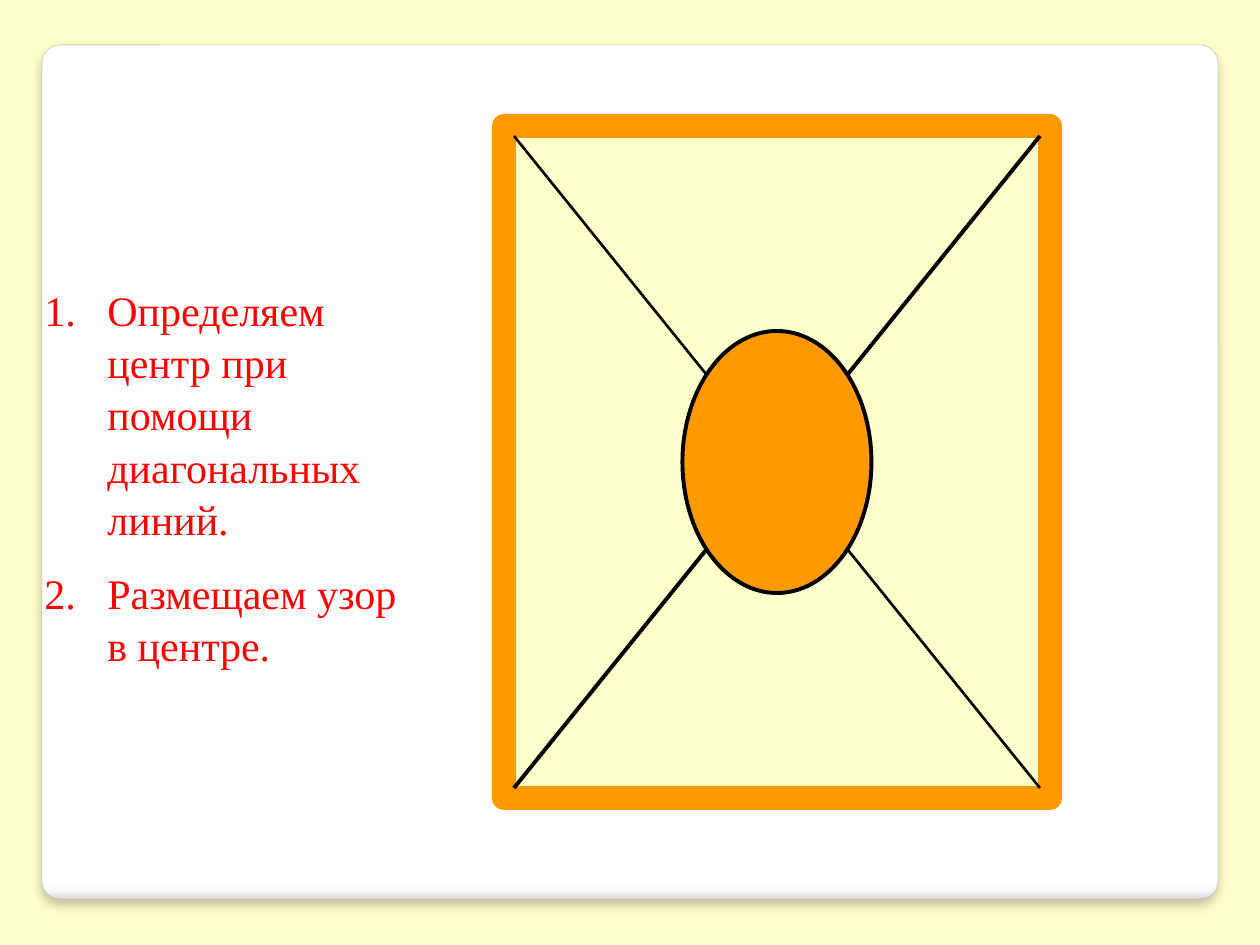
from dataclasses import dataclass

from lxml.etree import SubElement
from pptx import Presentation
from pptx.dml.color import RGBColor as Color
from pptx.enum.shapes import MSO_CONNECTOR as Connector, MSO_SHAPE as Shape
from pptx.oxml import parse_xml
from pptx.oxml.ns import nsdecls, qn
from pptx.util import Pt


@dataclass(frozen=True)
class Theme:
    """Colours and type sizes of the slide."""
    cream: str = "FFFFCC"
    orange: str = "FF9900"
    ink: str = "000000"
    red: str = "FF0000"
    edge: str = "A4A4A4"
    panel: tuple = ((0, "FFFFFF"), (98, "FFFFFF"), (99, "F7F7F7"), (100, "DADADA"))
    font: str = "Times New Roman"
    text_size: int = 24


THEME = Theme()
EMU_PER_PX = 914400 / 126


def px(*lengths):
    """Turn pixel lengths into a list of EMU."""
    return [round(length * EMU_PER_PX) for length in lengths]


def set_line(shape, color, width):
    """Give a shape or connector a solid outline."""
    shape.line.color.rgb = Color.from_string(color)
    shape.line.width = Pt(width)


def add_shape(page, kind, box, fill, line, width):
    """Add a flat preset shape with a solid fill and an outline."""
    shape = page.shapes.add_shape(kind, *px(*box))
    shape.shadow.inherit = False
    shape.fill.solid()
    shape.fill.fore_color.rgb = Color.from_string(fill)
    set_line(shape, line, width)
    return shape


def add_panel(page, box):
    """Place the rounded white panel with its shaded foot and soft shadow."""
    panel = add_shape(page, Shape.ROUNDED_RECTANGLE, box, "FFFFFF", THEME.edge, 0.16)
    panel.adjustments[0] = 0.021
    stops = "".join(
        f'<a:gs pos="{place * 1000}"><a:srgbClr val="{color}"/></a:gs>'
        for place, color in THEME.panel)
    gradient = parse_xml(
        f'<a:gradFill {nsdecls("a")}><a:gsLst>{stops}</a:gsLst>'
        '<a:lin ang="5400000" scaled="0"/></a:gradFill>')
    shadow = parse_xml(
        f'<a:outerShdw {nsdecls("a")} blurRad="{Pt(6)}" dist="{Pt(4)}" dir="5400000" '
        f'algn="t" rotWithShape="0"><a:srgbClr val="{THEME.ink}">'
        '<a:alpha val="25000"/></a:srgbClr></a:outerShdw>')
    properties = panel._element.spPr
    properties.replace(properties.find(qn("a:solidFill")), gradient)
    properties.find(qn("a:effectLst")).append(shadow)


def add_diagonal(page, start, end, width):
    """Draw one straight diagonal without a shadow."""
    diagonal = page.shapes.add_connector(Connector.STRAIGHT, *px(*start, *end))
    set_line(diagonal, THEME.ink, width)
    SubElement(diagonal._element.spPr, qn("a:effectLst"))


def add_pattern(page, box):
    """Place the framed sheet, its two diagonals and the central oval."""
    left, top, width, height = box
    inset, oval_width, oval_height = 10, 189, 262
    near_x, near_y = left + inset, top + inset
    far_x, far_y = left + width - inset, top + height - inset
    add_shape(page, Shape.RECTANGLE, box, THEME.cream, THEME.orange, 14)
    add_diagonal(page, (near_x, far_y), (far_x, near_y), 2.25)
    add_diagonal(page, (near_x, near_y), (far_x, far_y), 1.5)
    oval = (left + (width - oval_width) / 2, top + (height - oval_height) / 2,
            oval_width, oval_height)
    add_shape(page, Shape.OVAL, oval, THEME.orange, THEME.ink, 2.25)


def add_steps(page, box, steps):
    """Write the numbered steps with a hanging indent."""
    frame = page.shapes.add_textbox(*px(*box)).text_frame
    frame.word_wrap = True
    frame.text = "\n".join(steps)
    indent, = px(63)
    for index, para in enumerate(frame.paragraphs):
        para.line_spacing = 1.04
        para.space_before = Pt(12 if index else 0)
        properties = para._p.get_or_add_pPr()
        properties.set("marL", str(indent))
        properties.set("indent", str(-indent))
        SubElement(properties, qn("a:buAutoNum"), type="arabicPeriod")
        for span in para.runs:
            span.font.name = THEME.font
            span.font.size = Pt(THEME.text_size)
            span.font.color.rgb = Color.from_string(THEME.red)


def main():
    """Build and save the slide."""
    deck = Presentation()
    deck.slide_width, deck.slide_height = px(1260, 945)
    page = deck.slides.add_slide(deck.slide_layouts[6])
    page.background.fill.solid()
    page.background.fill.fore_color.rgb = Color.from_string(THEME.cream)
    add_panel(page, (42, 45, 1176, 854))
    add_pattern(page, (504, 126, 546, 672))
    add_steps(page, (32, 276, 399, 386), (
        "Определяем центр при помощи диагональных линий.",
        "Размещаем узор в центре."))
    deck.save("out.pptx")


if __name__ == "__main__":
    main()
